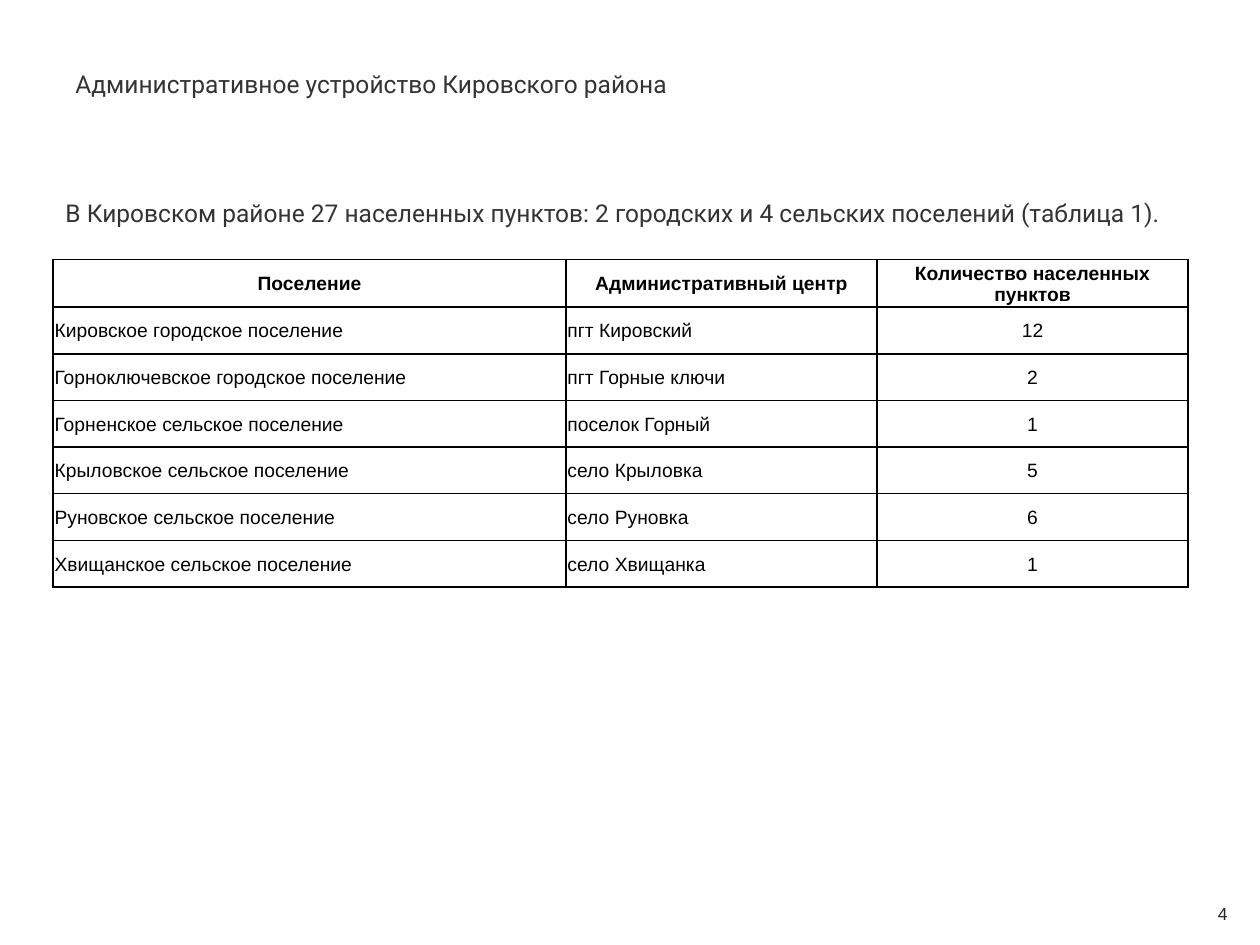
from lxml import etree
from pptx import Presentation
from pptx.dml.color import RGBColor
from pptx.enum.text import MSO_ANCHOR, PP_ALIGN
from pptx.oxml import parse_xml
from pptx.oxml.ns import nsdecls, qn
from pptx.util import Cm, Pt

LEFT, CENTER = PP_ALIGN.LEFT, PP_ALIGN.CENTER
TOP, MIDDLE = MSO_ANCHOR.TOP, MSO_ANCHOR.MIDDLE

BLACK = RGBColor(0x00, 0x00, 0x00)
DARK_GREY = RGBColor(0x33, 0x33, 0x33)
NUMBER_GREY = RGBColor(0x26, 0x26, 0x26)

COLUMN_WIDTHS = (10.34, 6.27, 6.27)
COLUMN_ALIGNMENTS = (LEFT, LEFT, CENTER)
ROW_HEIGHT = 0.94
SETTLEMENTS = (
    ("Поселение", "Административный центр", "Количество населенных пунктов"),
    ("Кировское городское поселение", "пгт Кировский", "12"),
    ("Горноключевское городское поселение", "пгт Горные ключи", "2"),
    ("Горненское сельское поселение", "поселок Горный", "1"),
    ("Крыловское сельское поселение", "село Крыловка", "5"),
    ("Руновское сельское поселение", "село Руновка", "6"),
    ("Хвищанское сельское поселение", "село Хвищанка", "1"),
)


def style_font(font, name, size, color, bold=False):
    font.name = name
    font.size = Pt(size)
    font.bold = bold
    font.color.rgb = color


def add_text(slide, box, text, name, size, color, alignment=LEFT, anchor=MIDDLE):
    """Add a one-paragraph text box and return its run."""
    shape = slide.shapes.add_textbox(*map(Cm, box))
    frame = shape.text_frame
    frame.word_wrap = True
    frame.vertical_anchor = anchor
    paragraph = frame.paragraphs[0]
    paragraph.alignment = alignment
    run = paragraph.add_run()
    run.text = text
    style_font(paragraph.font, name, size, color)
    return run


def add_title(slide, box):
    run = add_text(slide, box, "Административное устройство Кировского района",
                   "Roboto", 14, DARK_GREY)
    # Soft shadow under the letters
    run.font.color.rgb = DARK_GREY
    fill = run.font._element.find(qn("a:solidFill"))
    fill.addnext(parse_xml(
        f'<a:effectLst {nsdecls("a")}>'
        '<a:outerShdw blurRad="38100" dist="38100" dir="2700000" algn="tl">'
        '<a:srgbClr val="000000"><a:alpha val="43000"/></a:srgbClr>'
        '</a:outerShdw></a:effectLst>'))


def add_borders(cell):
    properties = cell._tc.get_or_add_tcPr()
    for position, side in enumerate(("lnL", "lnR", "lnT", "lnB")):
        line = etree.Element(qn(f"a:{side}"), w=str(Pt(1)))
        fill = etree.SubElement(line, qn("a:solidFill"))
        etree.SubElement(fill, qn("a:srgbClr"), val=str(BLACK))
        properties.insert(position, line)


def fill_cell(cell, text, alignment, bold):
    cell.text = text
    cell.vertical_anchor = MIDDLE
    cell.margin_left = cell.margin_right = cell.margin_top = Cm(0.03)
    cell.margin_bottom = 0
    cell.fill.background()
    add_borders(cell)
    paragraph = cell.text_frame.paragraphs[0]
    paragraph.alignment = alignment
    style_font(paragraph.font, "Arial", 11, BLACK, bold)


def add_settlement_table(slide, left, top):
    row_count = len(SETTLEMENTS)
    table = slide.shapes.add_table(
        row_count, len(COLUMN_WIDTHS), Cm(left), Cm(top),
        Cm(sum(COLUMN_WIDTHS)), Cm(ROW_HEIGHT * row_count)).table
    table.horz_banding = False
    table.first_row = False
    for column, width in zip(table.columns, COLUMN_WIDTHS):
        column.width = Cm(width)
    for row_index, values in enumerate(SETTLEMENTS):
        table.rows[row_index].height = Cm(ROW_HEIGHT)
        is_header = row_index == 0
        for column_index, text in enumerate(values):
            alignment = CENTER if is_header else COLUMN_ALIGNMENTS[column_index]
            fill_cell(table.cell(row_index, column_index), text, alignment, is_header)


def main():
    presentation = Presentation()
    presentation.slide_width = Cm(25.4)
    presentation.slide_height = Cm(19.05)
    slide = presentation.slides.add_slide(presentation.slide_layouts[6])

    # Heading
    add_title(slide, (1.27, 0.46, 23.5, 2.46))
    # Table of settlements
    add_settlement_table(slide, 1.07, 5.23)
    # Slide number
    add_text(slide, (24, 17.91, 1.3, 1.02), "4", "Arial", 10, NUMBER_GREY, CENTER)
    # Introductory sentence
    add_text(slide, (1.07, 3.86, 23.16, 0.86),
             "В Кировском районе 27 населенных пунктов: "
             "2 городских и 4 сельских поселений (таблица 1).",
             "Roboto", 14, DARK_GREY, anchor=TOP)

    presentation.save("out.pptx")


if __name__ == "__main__":
    main()
